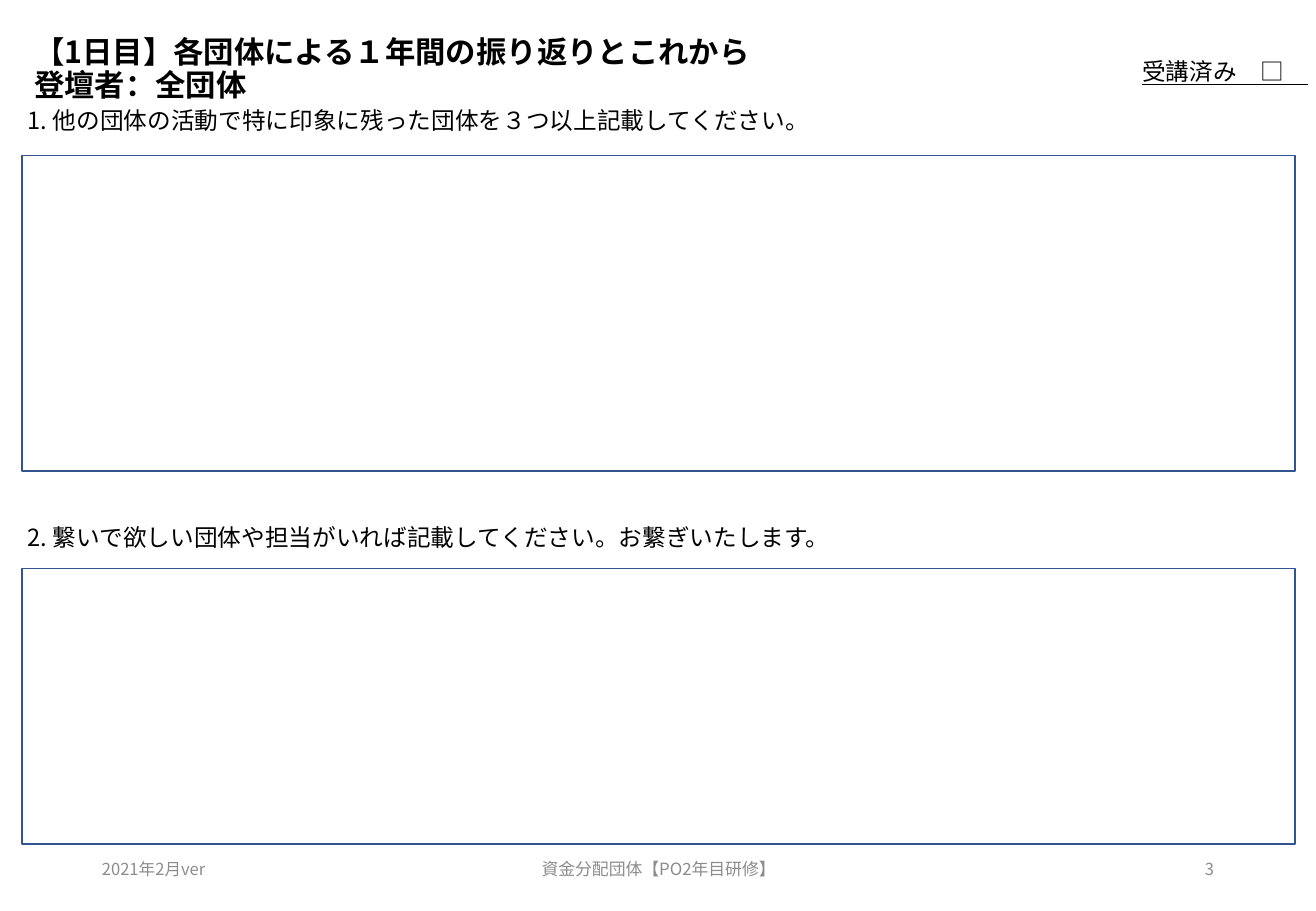
from lxml.etree import SubElement
from pptx import Presentation
from pptx.dml.color import RGBColor
from pptx.enum.shapes import MSO_SHAPE as SHAPE
from pptx.enum.text import MSO_ANCHOR as ANCHOR, PP_ALIGN as ALIGN
from pptx.oxml.ns import qn
from pptx.util import Inches, Pt

FONT = "Noto Sans CJK JP"
BLACK = RGBColor(0x00, 0x00, 0x00)
WHITE = RGBColor(0xFF, 0xFF, 0xFF)
GRAY = RGBColor(0x8C, 0x8C, 0x8C)
BLUE = RGBColor(0x32, 0x54, 0x91)


class Worksheet:
    """Holds the style and the current slide."""

    def __init__(self, prs):
        self.s = prs.slides.add_slide(prs.slide_layouts[5])

    def run(self, p, text, size, color=BLACK, bold=False, underline=False):
        r = p.add_run()
        r.text = text
        f = r.font
        f.name, f.size, f.bold, f.underline = FONT, Pt(size), bold, underline
        f.color.rgb = color
        SubElement(r._r.get_or_add_rPr(), qn("a:ea"), typeface=FONT)

    def title(self, lines, x, y, w, h):
        sp = self.s.shapes.title
        sp.left, sp.top, sp.width, sp.height = map(Inches, (x, y, w, h))
        tf = sp.text_frame
        tf.word_wrap, tf.vertical_anchor = True, ANCHOR.MIDDLE
        p = tf.paragraphs[0]
        p.alignment, p.line_spacing = ALIGN.LEFT, 0.9
        for i, line in enumerate(lines):
            if i:
                p.add_line_break()
            self.run(p, line, 18, bold=True)

    def text(self, text, x, y, w, h, size=14, color=BLACK, align=ALIGN.LEFT,
             anchor=ANCHOR.TOP, underline=False):
        sp = self.s.shapes.add_textbox(*map(Inches, (x, y, w, h)))
        tf = sp.text_frame
        tf.word_wrap, tf.vertical_anchor = True, anchor
        p = tf.paragraphs[0]
        p.alignment = align
        self.run(p, text, size, color, underline=underline)

    def answer_box(self, y, h):
        sp = self.s.shapes.add_shape(
            SHAPE.RECTANGLE, *map(Inches, (0.18, y, 10.48, h)))
        sp.shadow.inherit = False
        sp.fill.solid()
        sp.fill.fore_color.rgb = WHITE
        sp.line.color.rgb = BLUE
        sp.line.width = Pt(1)

    def footer(self, text, x, w, size, align):
        self.text(text, x, 6.95, w, 0.4, size, GRAY, align, ANCHOR.MIDDLE)


def main():
    prs = Presentation()
    prs.slide_width, prs.slide_height = Inches(10.83), Inches(7.5)
    sheet = Worksheet(prs)

    # Heading and attendance check
    sheet.title(["【1日目】各団体による１年間の振り返りとこれから", "登壇者：全団体"],
                0.18, 0.15, 9.34, 0.86)
    sheet.text("受講済み　□　", 9.3, 0.42, 2.01, 0.34, underline=True)

    # Questions with their answer boxes
    for question, y, box_y, box_h in (
        ("1. 他の団体の活動で特に印象に残った団体を３つ以上記載してください。",
         0.82, 1.28, 2.6),
        ("2. 繋いで欲しい団体や担当がいれば記載してください。お繋ぎいたします。",
         4.26, 4.68, 2.27),
    ):
        sheet.text(question, 0.13, y, 10.48, 0.34)
        sheet.answer_box(box_y, box_h)

    # Footer
    sheet.footer("2021年2月ver", 0.74, 2.44, 9.8, ALIGN.LEFT)
    sheet.footer("資金分配団体【PO2年目研修】", 3.59, 3.66, 10, ALIGN.CENTER)
    sheet.footer("3", 7.65, 2.44, 9.8, ALIGN.RIGHT)

    prs.save("out.pptx")


if __name__ == "__main__":
    main()
